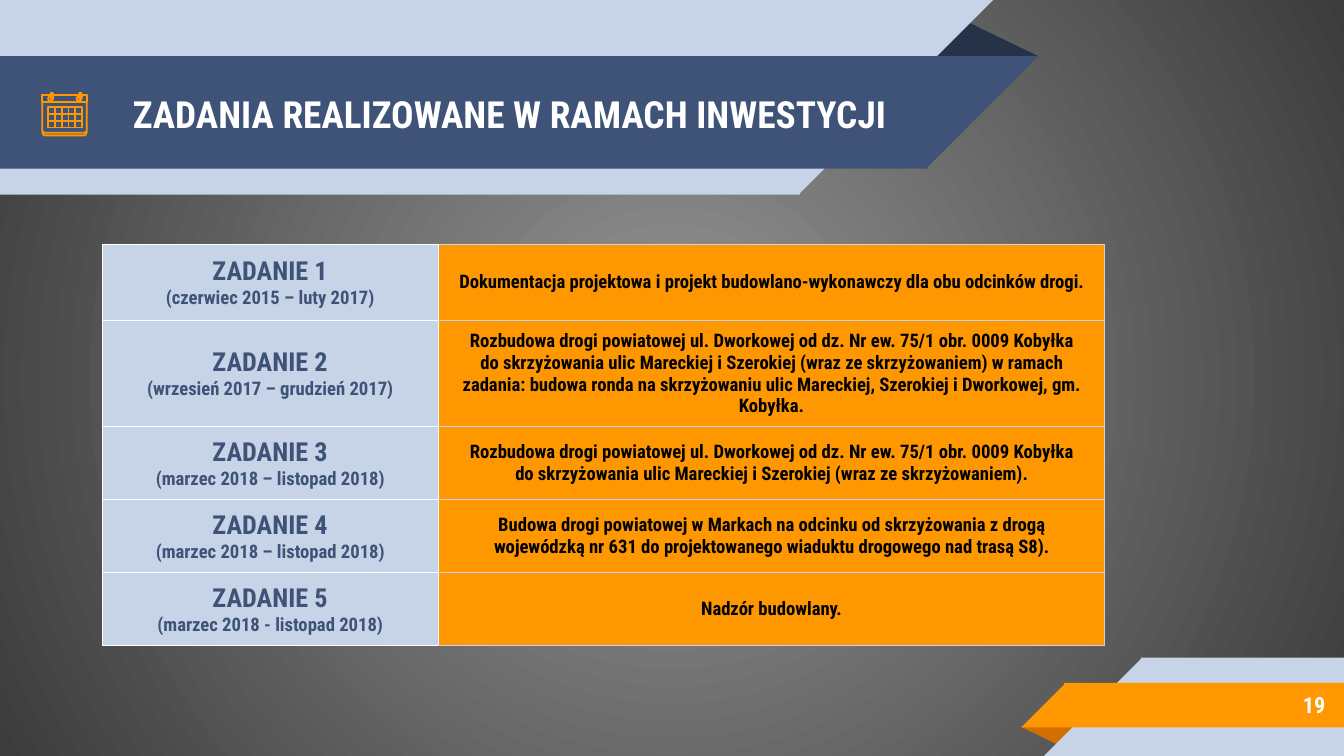
from lxml import etree
from pptx import Presentation
from pptx.dml.color import RGBColor
from pptx.enum.shapes import MSO_CONNECTOR, MSO_SHAPE
from pptx.enum.text import MSO_ANCHOR, MSO_AUTO_SIZE, PP_ALIGN
from pptx.oxml.ns import qn
from pptx.util import Cm, Pt

RECT, OVAL = MSO_SHAPE.RECTANGLE, MSO_SHAPE.OVAL
CORNER, FOLD = MSO_SHAPE.RIGHT_TRIANGLE, MSO_SHAPE.ISOSCELES_TRIANGLE
STRAIGHT = MSO_CONNECTOR.STRAIGHT
MIDDLE, NO_FIT = MSO_ANCHOR.MIDDLE, MSO_AUTO_SIZE.NONE
LEFT, CENTER, RIGHT = PP_ALIGN.LEFT, PP_ALIGN.CENTER, PP_ALIGN.RIGHT

FONT = "Roboto Condensed"
WHITE = RGBColor(0xFF, 0xFF, 0xFF)
BLACK = RGBColor(0, 0, 0)
PALE = RGBColor(0xC7, 0xD3, 0xE6)
BLUE = RGBColor(0x3F, 0x53, 0x78)
NAVY = RGBColor(0x26, 0x32, 0x48)
ORANGE = RGBColor(0xFF, 0x98, 0x00)
RUST = RGBColor(0xD2, 0x6F, 0x00)
GREY = RGBColor(0x96, 0x96, 0x96)
DARK = RGBColor(0x3C, 0x3C, 0x3C)

deck = Presentation()
deck.slide_width, deck.slide_height = Cm(25.4), Cm(14.29)
slide = deck.slides.add_slide(deck.slide_layouts[5])
shapes = slide.shapes


def style(part, size, color, align):
    part.alignment = align
    part.font.name, part.font.size = FONT, Pt(size)
    part.font.bold, part.font.color.rgb = True, color


def trace(shape):
    """Draw a shape as a thin orange outline."""
    shape.shadow.inherit = False
    shape.fill.background()
    shape.line.color.rgb, shape.line.width = ORANGE, Pt(0.96)


# Background: grey glow from the centre
fill = slide.background.fill
fill.gradient()
for stop, color in zip(fill.gradient_stops, (GREY, DARK)):
    stop.color.rgb = color
grad = slide.element.find(".//" + qn("a:gradFill"))
grad.remove(grad.find(qn("a:lin")))
glow = etree.SubElement(grad, qn("a:path"), path="circle")
etree.SubElement(glow, qn("a:fillToRect"), l="50000", t="50000", r="50000", b="50000")

# Ribbons at the top left and bottom right; each strip slightly overlaps its corner
for kind, x, y, w, h, color, turn in (
    (FOLD, 17.48, 0.36, 2.16, 0.71, NAVY, 0),
    (RECT, 0, 0, 15.12, 3.68, PALE, 0),
    (CORNER, 15.09, 0, 3.68, 3.68, PALE, 90),
    (RECT, 0, 1.06, 17.53, 2.13, BLUE, 0),
    (CORNER, 17.5, 1.06, 2.13, 2.13, BLUE, 90),
    (FOLD, 19.3, 13.74, 1.09, 0.36, RUST, 180),
    (RECT, 21.56, 12.43, 3.84, 1.86, PALE, 0),
    (CORNER, 19.73, 12.43, 1.86, 1.86, PALE, 270),
    (RECT, 20.11, 12.91, 5.29, 0.84, ORANGE, 0),
    (CORNER, 19.3, 12.91, 0.84, 0.84, ORANGE, 270),
):
    band = shapes.add_shape(kind, Cm(x), Cm(y), Cm(w), Cm(h))
    band.shadow.inherit = False
    band.fill.solid()
    band.fill.fore_color.rgb = color
    band.line.fill.background()
    band.rotation = turn
    if kind == FOLD:
        band.adjustments[0] = 0.32

# Title, brought in front of the ribbons, and page number
title = shapes.title
title.left, title.top, title.width, title.height = Cm(2.26), Cm(1.09), Cm(15.24), Cm(2.13)
shapes.element.append(title.element)
page = shapes.add_textbox(Cm(21.16), Cm(12.88), Cm(4.14), Cm(0.89))
for box, text, size, align in (
    (title, "ZADANIA REALIZOWANE W RAMACH INWESTYCJI", 20, LEFT),
    (page, "19", 12, RIGHT),
):
    frame = box.text_frame
    frame.text = text
    frame.word_wrap, frame.auto_size = True, NO_FIT
    frame.vertical_anchor = MIDDLE
    frame.margin_left = frame.margin_right = Cm(0.25)
    frame.margin_top = frame.margin_bottom = Cm(0.25)
    style(frame.paragraphs[0], size, WHITE, align)

# Table of tasks: row height, dates, scope
tasks = (
    (1.44, "(czerwiec 2015 – luty 2017)",
     "Dokumentacja projektowa i projekt budowlano-wykonawczy dla obu odcinków drogi."),
    (2.01, "(wrzesień 2017 – grudzień 2017)",
     "Rozbudowa drogi powiatowej ul. Dworkowej od dz. Nr ew. 75/1 obr. 0009 Kobyłka\n"
     "do skrzyżowania ulic Mareckiej i Szerokiej (wraz ze skrzyżowaniem) w ramach zadania: "
     "budowa ronda na skrzyżowaniu ulic Mareckiej, Szerokiej i Dworkowej, gm. Kobyłka."),
    (1.38, "(marzec 2018 – listopad 2018)",
     "Rozbudowa drogi powiatowej ul. Dworkowej od dz. Nr ew. 75/1 obr. 0009 Kobyłka\n"
     "do skrzyżowania ulic Mareckiej i Szerokiej (wraz ze skrzyżowaniem)."),
    (1.38, "(marzec 2018 – listopad 2018)",
     "Budowa drogi powiatowej w Markach na odcinku od skrzyżowania z drogą wojewódzką "
     "nr 631 do projektowanego wiaduktu drogowego nad trasą S8)."),
    (1.38, "(marzec 2018 - listopad 2018)", "Nadzór budowlany."),
)
high = sum(task[0] for task in tasks)
table = shapes.add_table(len(tasks), 2, Cm(1.93), Cm(4.62), Cm(18.95), Cm(high)).table
table.first_row = table.horz_banding = False
table.columns[0].width, table.columns[1].width = Cm(6.35), Cm(12.6)
for row, (tall, dates, scope) in enumerate(tasks):
    table.rows[row].height = Cm(tall)
    for col, (text, back, ink, edge) in enumerate((
        (f"ZADANIE {row + 1}\n{dates}", PALE, BLUE, WHITE),
        (scope, ORANGE, BLACK, PALE),
    )):
        cell = table.cell(row, col)
        cell.text = text
        cell.vertical_anchor = MIDDLE
        cell.margin_top = cell.margin_bottom = Cm(0.18)
        for num, part in enumerate(cell.text_frame.paragraphs):
            style(part, 14 if col == 0 and num == 0 else 10, ink, CENTER)
        props = cell._tc.get_or_add_tcPr()
        for side in "LRTB":
            rule = etree.SubElement(props, qn("a:ln" + side), w=str(Pt(0.75)))
            solid = etree.SubElement(rule, qn("a:solidFill"))
            tint = WHITE if side == "L" else edge
            etree.SubElement(solid, qn("a:srgbClr"), val=str(tint))
        cell.fill.solid()
        cell.fill.fore_color.rgb = back

# Calendar icon: outlines in hundredths of a centimetre
for points, closed in (
    (((164, 193), (164, 180), (80, 180), (80, 193)), False),
    (((80, 249), (81, 253), (84, 256), (160, 256), (163, 253), (164, 249)), False),
    (((80, 193), (80, 248), (84, 251), (160, 251), (164, 248), (164, 193)), True),
    (((91, 203), (155, 203), (155, 241), (91, 241)), True),
):
    pen = shapes.build_freeform(*points[0], scale=Cm(0.01))
    pen.add_line_segments(points[1:], close=closed)
    trace(pen.convert_to_shape())

# Calendar rings and pins
for x in (0.91, 1.45):
    trace(shapes.add_shape(OVAL, Cm(x), Cm(1.82), Cm(0.09), Cm(0.09)))
    trace(shapes.add_shape(OVAL, Cm(x + 0.04), Cm(1.75), Cm(0.06), Cm(0.13)))

# Calendar grid
left, top, right, low = 0.91, 2.03, 1.55, 2.41
grid = [(left, top + (low - top) * i / 3, right, top + (low - top) * i / 3) for i in (1, 2)]
grid += [(left + (right - left) * i / 5, top, left + (right - left) * i / 5, low)
         for i in range(1, 5)]
for ends in grid:
    wire = shapes.add_connector(STRAIGHT, *map(Cm, ends))
    wire.line.color.rgb, wire.line.width = ORANGE, Pt(0.96)
    etree.SubElement(wire.element.spPr, qn("a:effectLst"))

deck.save("out.pptx")
